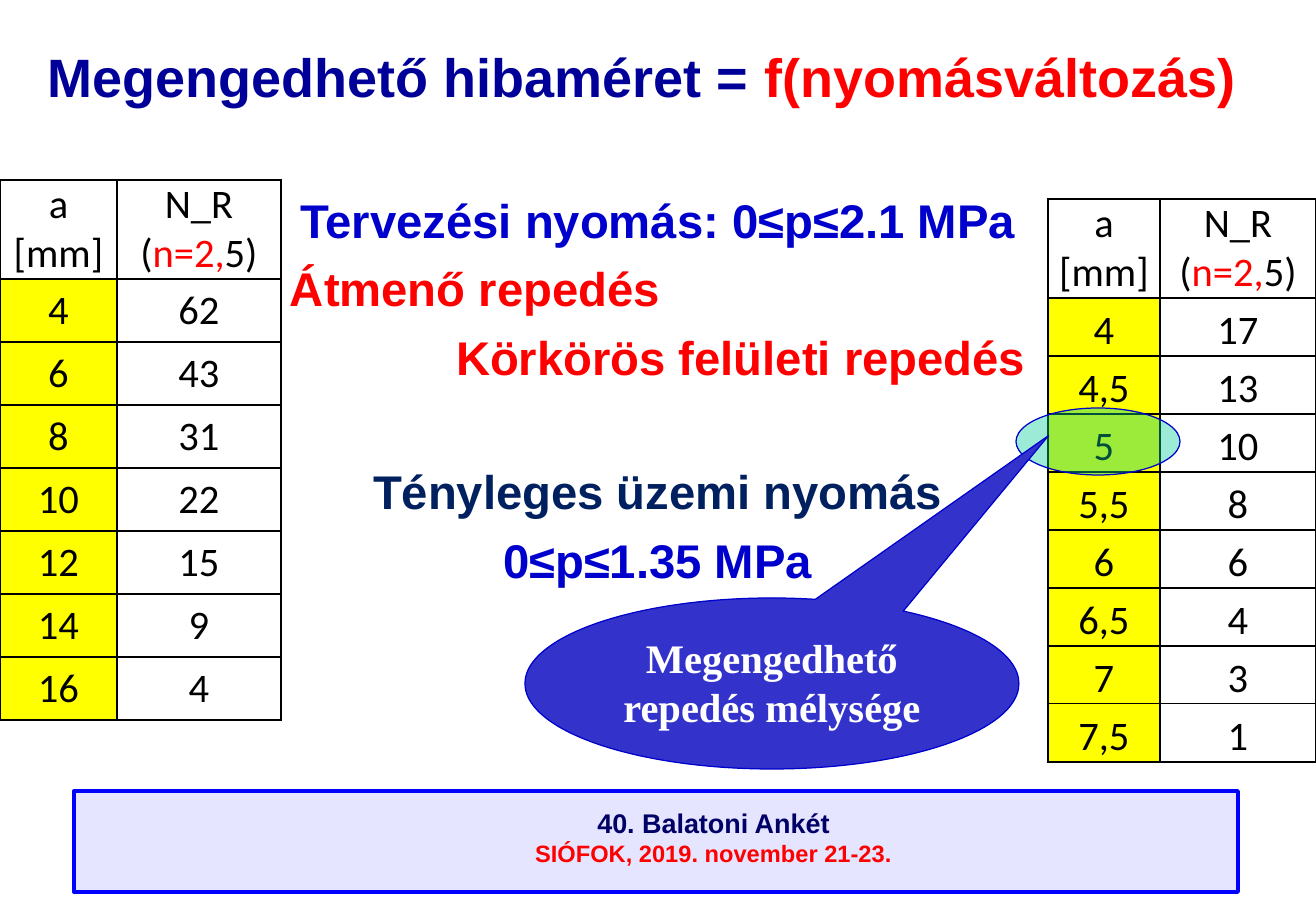
from pptx import Presentation
from pptx.dml.color import RGBColor
from pptx.enum.shapes import MSO_SHAPE as Shape
from pptx.enum.text import MSO_ANCHOR as Anchor, PP_ALIGN as Align
from pptx.oxml.ns import qn
from pptx.util import Pt
from lxml.etree import SubElement

PX = 7526
BLACK = RGBColor(0x00, 0x00, 0x00)
WHITE = RGBColor(0xFF, 0xFF, 0xFF)
RED = RGBColor(0xFF, 0x00, 0x00)
YELLOW = RGBColor(0xFF, 0xFF, 0x00)
BLUE = RGBColor(0x00, 0x00, 0xFF)
TITLE_BLUE = RGBColor(0x00, 0x00, 0x99)
TEXT_BLUE = RGBColor(0x00, 0x00, 0xCC)
DARK_BLUE = RGBColor(0x00, 0x20, 0x60)
EVENT_BLUE = RGBColor(0x00, 0x00, 0x66)
CALLOUT_BLUE = RGBColor(0x33, 0x33, 0xCC)
LAVENDER = RGBColor(0xCC, 0xCC, 0xFF)
GREEN = RGBColor(0x00, 0xCC, 0x99)

HEADER_HEIGHT = 99
THROUGH_CRACK = [("4", "62"), ("6", "43"), ("8", "31"), ("10", "22"),
                 ("12", "15"), ("14", "9"), ("16", "4")]
SURFACE_CRACK = [("4", "17"), ("4,5", "13"), ("5", "10"), ("5,5", "8"),
                 ("6", "6"), ("6,5", "4"), ("7", "3"), ("7,5", "1")]


def scaled(*lengths):
    """Turn px lengths into EMU."""
    return [length * PX for length in lengths]


def write(frame, *runs, new=False, size=24, font="Arial", bold=True,
          align=Align.CENTER, before=0):
    """Write (text, colour) runs into the first or a new paragraph."""
    paragraph = frame.add_paragraph() if new else frame.paragraphs[0]
    paragraph.alignment = align
    paragraph.space_before = Pt(before)
    for text, color in runs:
        run = paragraph.add_run()
        run.text = text
        run.font.size = Pt(size)
        run.font.name = font
        run.font.bold = bold
        run.font.color.rgb = color


def add_frame(slide, box, anchor=Anchor.TOP):
    """Add a wrapping text box and return its text frame."""
    frame = slide.shapes.add_textbox(*scaled(*box)).text_frame
    frame.word_wrap = True
    frame.vertical_anchor = anchor
    return frame


def add_panel(slide, preset, box, fill, line, width, opacity=100):
    """Add a filled and outlined preset shape."""
    panel = slide.shapes.add_shape(preset, *scaled(*box))
    panel.shadow.inherit = False
    panel.fill.solid()
    panel.fill.fore_color.rgb = fill
    panel.line.color.rgb = line
    panel.line.width = Pt(width)
    if opacity < 100:
        color = panel.fill._xPr.find(qn("a:solidFill"))[0]
        SubElement(color, qn("a:alpha"), val=str(opacity * 1000))
    return panel


def add_footer(slide, box):
    """Draw the event banner."""
    left, top, width, height = box
    add_panel(slide, Shape.RECTANGLE, box, LAVENDER, BLUE, 2.25, 50)
    event = add_frame(slide, (left + 143, top + 10, width - 171, height - 27))
    write(event, ("40. Balatoni Ankét", EVENT_BLUE), size=16)
    write(event, ("SIÓFOK, 2019. november 21-23.", RED), size=14, new=True)


def add_title(slide, box):
    """Write the slide title."""
    write(add_frame(slide, box, Anchor.MIDDLE),
          ("Megengedhető hibaméret = ", TITLE_BLUE),
          ("f(nyomásváltozás)", RED), size=32)


def add_pressures(slide, box):
    """Write the design and operating pressure lines."""
    lines = [("Tervezési nyomás: 0≤p≤2.1 MPa", TEXT_BLUE, Align.CENTER, 0),
             ("Átmenő repedés", RED, Align.LEFT, 7),
             ("Körkörös felületi repedés", RED, Align.RIGHT, 7),
             ("Tényleges üzemi nyomás", DARK_BLUE, Align.CENTER, 46),
             ("0≤p≤1.35 MPa", TEXT_BLUE, Align.CENTER, 7)]
    frame = add_frame(slide, box)
    for index, (text, color, align, before) in enumerate(lines):
        write(frame, (text, color), new=index > 0, size=28, align=align,
              before=before)


def add_borders(cell, top, bottom):
    """Give a cell black borders, 1.5 pt at its sides."""
    properties = cell._tc.get_or_add_tcPr()
    for side, width in (("L", 1.5), ("R", 1.5), ("T", top), ("B", bottom)):
        border = SubElement(properties, qn(f"a:ln{side}"), w=str(Pt(width)))
        fill = SubElement(border, qn("a:solidFill"))
        SubElement(fill, qn("a:srgbClr"), val=str(BLACK))


def add_crack_table(slide, box, first_width, sizes, anchor):
    """Draw a table of crack size against number of cycles."""
    left, top, width, height = box
    header = ([("a [mm]", BLACK)],
              [("N_R (", BLACK), ("n=2,", RED), ("5)", BLACK)])
    rows = [header] + [[[(value, BLACK)] for value in pair] for pair in sizes]
    last = len(sizes)
    table = slide.shapes.add_table(len(rows), 2, *scaled(*box)).table
    table.first_row = table.horz_banding = False
    table.columns[0].width, table.columns[1].width = scaled(
        first_width, width - first_width)
    row_height = (height - HEADER_HEIGHT) // last
    for r, row in enumerate(rows):
        table.rows[r].height = (row_height if r else HEADER_HEIGHT) * PX
        for c, runs in enumerate(row):
            cell = table.cell(r, c)
            cell.margin_left = cell.margin_right = 9 * PX
            cell.margin_top = cell.margin_bottom = 0
            cell.vertical_anchor = anchor if r else Anchor.MIDDLE
            add_borders(cell, 1 if r else 1.5, 1.5 if r == last else 1)
            if r and c == 0:
                cell.fill.solid()
                cell.fill.fore_color.rgb = YELLOW
            else:
                cell.fill.background()
            write(cell.text_frame, *runs, font="Calibri", bold=False)


def add_depth_callout(slide, box, marker_box):
    """Mark the allowable crack depth and label it."""
    add_panel(slide, Shape.OVAL, marker_box, GREEN, TEXT_BLUE, 0.75, 39)
    callout = add_panel(slide, Shape.OVAL_CALLOUT, box, CALLOUT_BLUE,
                        TEXT_BLUE, 0.75)
    callout.adjustments[0] = 0.56
    callout.adjustments[1] = -1.45
    frame = callout.text_frame
    frame.word_wrap = True
    frame.vertical_anchor = Anchor.TOP
    frame.margin_top = 10 * PX
    write(frame, ("Megengedhető repedés mélysége", WHITE),
          font="Times New Roman")


def main():
    """Build and save the slide."""
    deck = Presentation()
    deck.slide_width, deck.slide_height = scaled(1316, 911)
    slide = deck.slides.add_slide(deck.slide_layouts[6])
    add_footer(slide, (74, 791, 1164, 101))
    add_title(slide, (0, 0, 1284, 152))
    add_pressures(slide, (278, 185, 759, 403))
    add_crack_table(slide, (0, 180, 281, 540), 117, THROUGH_CRACK,
                    Anchor.MIDDLE)
    add_crack_table(slide, (1048, 199, 268, 563), 112, SURFACE_CRACK,
                    Anchor.BOTTOM)
    add_depth_callout(slide, (525, 598, 494, 171), (1016, 408, 164, 67))
    deck.save("out.pptx")


if __name__ == "__main__":
    main()
